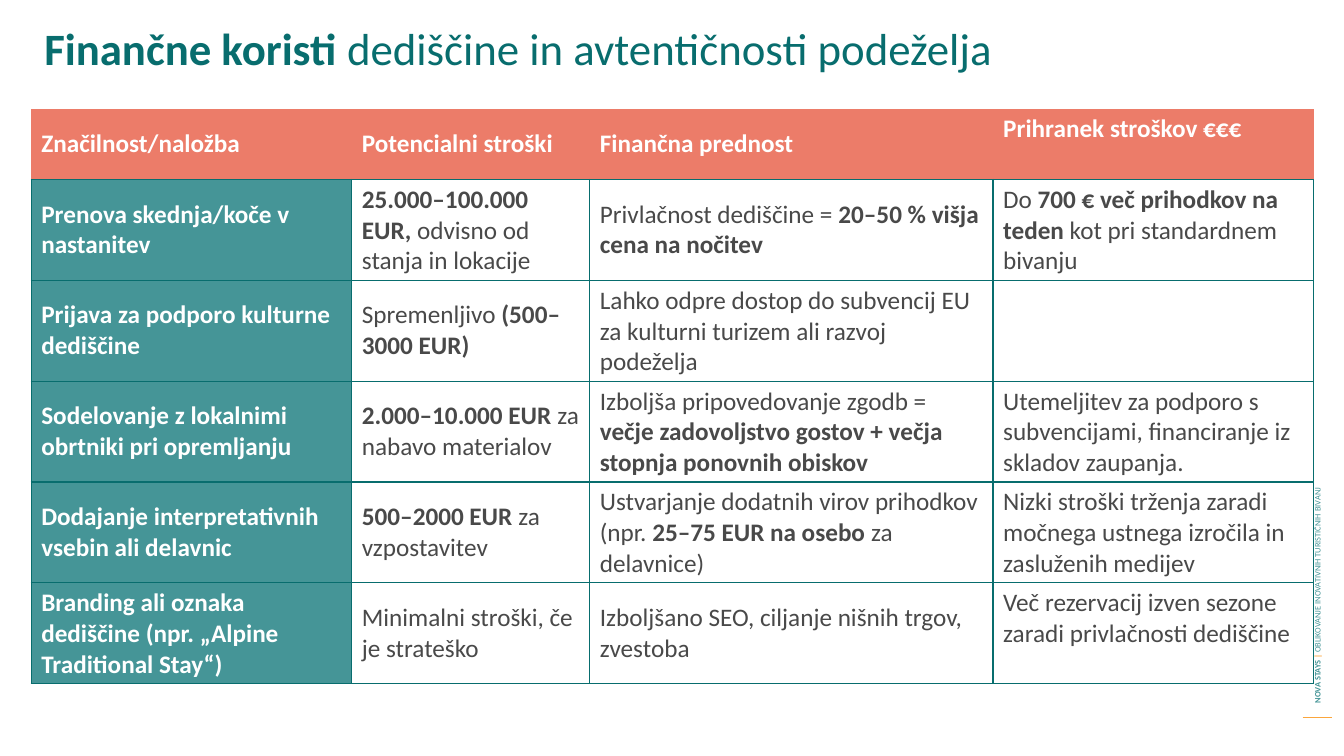
import pptx
import pptx.dml.color
import pptx.enum.shapes
import pptx.enum.text
import pptx.oxml.ns
import pptx.util
from lxml import etree

Inches = pptx.util.Inches
ANCHOR = pptx.enum.text.MSO_ANCHOR

COLORS = {"dark_teal": "086D6E", "teal": "459597", "coral": "EC7C69",
          "orange": "FBA63D", "white": "FFFFFF", "gray": "494949"}
FONT = "Calibri"

TITLE = "**Finančne koristi **dediščine in avtentičnosti podeželja"
HEADER = ["Značilnost/naložba", "Potencialni stroški", "Finančna prednost",
          "Prihranek stroškov €€€"]
INVESTMENTS = [
    ["Prenova skednja/koče v nastanitev",
     "**25.000–100.000 EUR, **odvisno od stanja in lokacije",
     "Privlačnost dediščine =** 20–50 % višja cena na nočitev**",
     "Do** 700 € več prihodkov na teden **kot pri standardnem bivanju"],
    ["Prijava za podporo kulturne dediščine",
     "Spremenljivo **(500–3000 EUR)**",
     "Lahko odpre dostop do subvencij EU za kulturni turizem ali razvoj podeželja",
     ""],
    ["Sodelovanje z lokalnimi obrtniki pri opremljanju",
     "**2.000–10.000 EUR **za nabavo materialov",
     "Izboljša pripovedovanje zgodb = **večje zadovoljstvo gostov + večja "
     "stopnja ponovnih obiskov**",
     "Utemeljitev za podporo s subvencijami, financiranje iz skladov zaupanja."],
    ["Dodajanje interpretativnih vsebin ali delavnic",
     "**500–2000 EUR **za vzpostavitev",
     "Ustvarjanje dodatnih virov prihodkov (npr.** 25–75 EUR na osebo **za delavnice)",
     "Nizki stroški trženja zaradi močnega ustnega izročila in zasluženih medijev"],
    ["Branding ali oznaka dediščine (npr. „Alpine Traditional Stay“)",
     "Minimalni stroški, če je strateško",
     "Izboljšano SEO, ciljanje nišnih trgov, zvestoba",
     "Več rezervacij izven sezone zaradi privlačnosti dediščine"],
]
SIDE_LABEL = [("**NOVA STAYS **", "teal"), ("**| **", "orange"),
              ("OBLIKOVANJE INOVATIVNIH TURISTIČNIH BIVANJ", "teal")]
COLUMN_WIDTHS = [3.18, 2.36, 4, 3.18]
HEADER_HEIGHT, ROW_HEIGHT = 0.7, 1


def rgb(color):
    return pptx.dml.color.RGBColor.from_string(COLORS[color])


def write(frame, text, size=18, color="gray", bold=False, anchor=ANCHOR.MIDDLE):
    frame.vertical_anchor = anchor
    paragraph = frame.paragraphs[0]
    paragraph.alignment = pptx.enum.text.PP_ALIGN.LEFT
    for position, part in enumerate(text.split("**")):
        if part:
            run = paragraph.add_run()
            run.text = part
            run.font.name = FONT
            run.font.size = pptx.util.Pt(size)
            run.font.bold = bold or position % 2 == 1
            run.font.color.rgb = rgb(color)


def set_borders(cell, visible):
    properties = cell._tc.get_or_add_tcPr()
    qn = pptx.oxml.ns.qn
    for order, side in enumerate("LRTB"):
        border = etree.Element(qn(f"a:ln{side}"), w="12700")
        if side in visible:
            fill = etree.SubElement(border, qn("a:solidFill"))
            etree.SubElement(fill, qn("a:srgbClr"), val=COLORS["dark_teal"])
        else:
            etree.SubElement(border, qn("a:noFill"))
        properties.insert(order, border)


def add_benefits(slide):
    rows = [HEADER] + INVESTMENTS
    table = slide.shapes.add_table(
        len(rows), len(HEADER), Inches(0.31), Inches(1.08),
        Inches(sum(COLUMN_WIDTHS)),
        Inches(HEADER_HEIGHT + ROW_HEIGHT * len(INVESTMENTS))).table
    table.first_row = table.horz_banding = False
    for column, width in zip(table.columns, COLUMN_WIDTHS):
        column.width = Inches(width)
    last = (len(rows) - 1, len(HEADER) - 1)
    for r, row in enumerate(rows):
        table.rows[r].height = Inches(ROW_HEIGHT if r else HEADER_HEIGHT)
        for c, text in enumerate(row):
            cell = table.cell(r, c)
            heading = r == 0 or c == 0
            if heading:
                cell.fill.solid()
                cell.fill.fore_color.rgb = rgb("teal" if r else "coral")
            else:
                cell.fill.background()
            set_borders(cell, "LRTB" if r else "B")
            anchor = ANCHOR.TOP if (r, c) in [(0, last[1]), last] else ANCHOR.MIDDLE
            write(cell.text_frame, text, color="white" if heading else "gray",
                  bold=heading, anchor=anchor)
            cell.vertical_anchor = anchor


def add_side_label(slide):
    rule = slide.shapes.add_connector(
        pptx.enum.shapes.MSO_CONNECTOR.STRAIGHT,
        Inches(12.92), Inches(7.12), Inches(13.21), Inches(7.12))
    rule.line.color.rgb = rgb("orange")
    rule.line.width = pptx.util.Pt(0.75)
    etree.SubElement(rule._element.spPr, pptx.oxml.ns.qn("a:effectLst"))
    label = slide.shapes.add_textbox(Inches(10.18), Inches(4.09), Inches(5.77), Inches(0.2))
    label.rotation = 270
    label.text_frame.word_wrap = True
    for text, color in SIDE_LABEL:
        write(label.text_frame, text, size=6, color=color)


def main():
    deck = pptx.Presentation()
    deck.slide_width, deck.slide_height = Inches(13.33), Inches(7.5)
    slide = deck.slides.add_slide(deck.slide_layouts[5])
    add_side_label(slide)
    title = slide.shapes.title
    title.left, title.top = Inches(0.34), Inches(0.16)
    title.width, title.height = Inches(11.4), Inches(0.64)
    title.text_frame.auto_size = pptx.enum.text.MSO_AUTO_SIZE.NONE
    write(title.text_frame, TITLE, size=32, color="dark_teal", anchor=ANCHOR.TOP)
    add_benefits(slide)
    deck.save("out.pptx")


if __name__ == "__main__":
    main()
